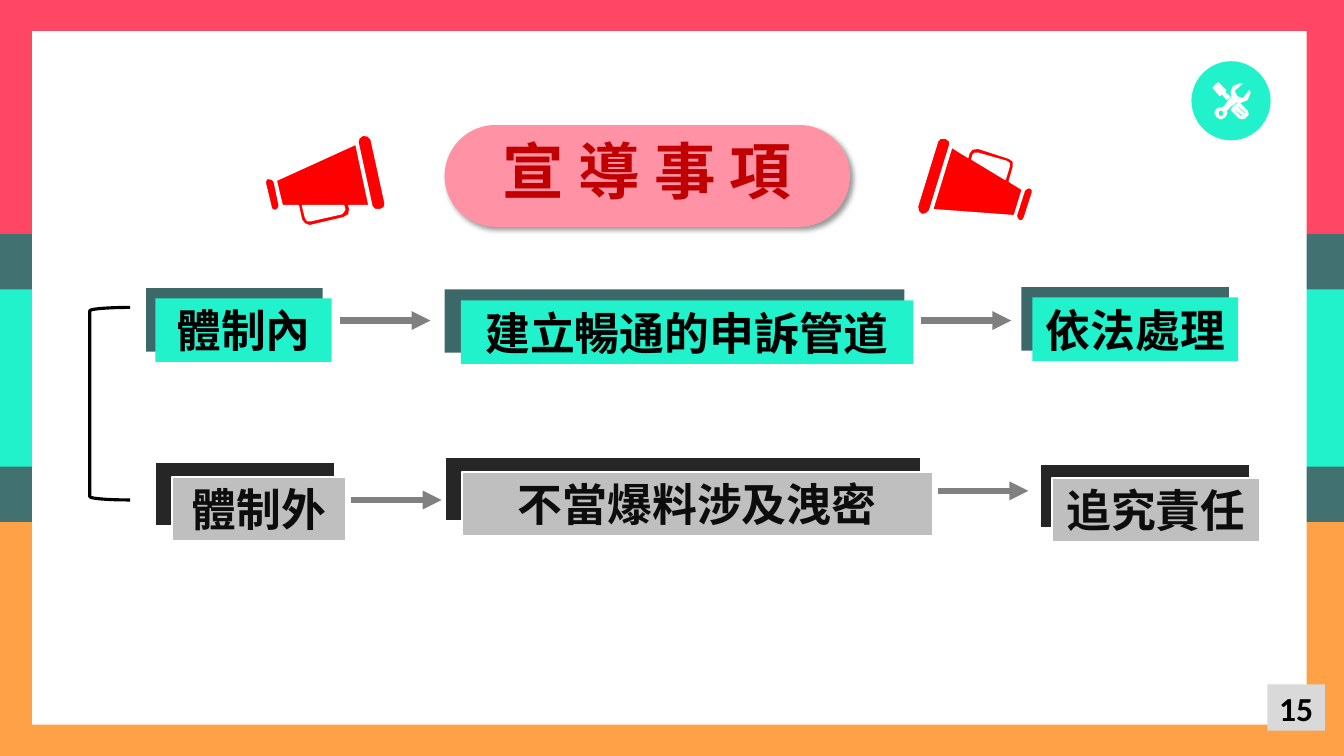
"""Builds the slide 宣導事項: two reporting routes with their outcomes."""
from lxml import etree
from pptx import Presentation
from pptx.dml.color import RGBColor
from pptx.enum.shapes import MSO_CONNECTOR, MSO_SHAPE
from pptx.enum.text import MSO_ANCHOR, MSO_AUTO_SIZE, PP_ALIGN
from pptx.oxml.ns import qn
from pptx.util import Inches, Pt

RECT, OVAL = MSO_SHAPE.RECTANGLE, MSO_SHAPE.OVAL
PILL, BRACKET = MSO_SHAPE.ROUNDED_RECTANGLE, MSO_SHAPE.LEFT_BRACKET
STRAIGHT = MSO_CONNECTOR.STRAIGHT
CENTER, TOP, MIDDLE = PP_ALIGN.CENTER, MSO_ANCHOR.TOP, MSO_ANCHOR.MIDDLE
GROW, FIXED = MSO_AUTO_SIZE.SHAPE_TO_FIT_TEXT, MSO_AUTO_SIZE.NONE
CJK = "Noto Sans CJK SC"
COLORS = {
    "slate": "427172", "mint": "22F2CC", "coral": "FF4664", "orange": "FFA146",
    "white": "FFFFFF", "pink": "FF93A5", "crimson": "C00000", "red": "FF0000",
    "black": "000000", "ink": "0D0D0D", "pale": "D9D9D9", "teal": "3D6869",
    "charcoal": "262626", "silver": "BFBFBF", "gray": "808080",
}
COLORS = {name: RGBColor.from_string(value) for name, value in COLORS.items()}


def paint(sp, fill=None, line=None, width=1):
    """Set fill and line, with no shadow."""
    sp.shadow.inherit = False
    for part, color in ((sp.fill, fill), (sp.line.fill, line)):
        if color:
            part.solid()
            part.fore_color.rgb = COLORS[color]
        else:
            part.background()
    if line:
        sp.line.width = Pt(width)
    return sp


def write(sp, text, color, size=32, font=CJK, anchor=MIDDLE, fit=FIXED):
    """Put one centred bold line into a shape."""
    tf = sp.text_frame
    for name, value in {"word_wrap": True, "auto_size": fit, "vertical_anchor": anchor}.items():
        setattr(tf, name, value)
    p = tf.paragraphs[0]
    p.alignment = CENTER
    r = p.add_run()
    r.text = text
    for name, value in {"size": Pt(size), "bold": True, "name": font}.items():
        setattr(r.font, name, value)
    r.font.color.rgb = COLORS[color]
    etree.SubElement(r.font._element, qn("a:ea"), typeface=font)
    return p


prs = Presentation()
prs.slide_width, prs.slide_height = Inches(13.33), Inches(7.5)
s = prs.slides.add_slide(prs.slide_layouts[6])

for x, y, w, h, color in [
    (0, 0, 13.33, 7.5, "slate"), (0, 2.87, 13.33, 1.76, "mint"),
    (0, 0, 13.33, 2.32, "coral"), (0, 5.18, 13.33, 2.32, "orange"),
    (0.32, 0.31, 12.64, 6.88, "white"),
]:
    paint(s.shapes.add_shape(RECT, Inches(x), Inches(y), Inches(w), Inches(h)), color)

badge = s.shapes.add_group_shape().shapes
paint(badge.add_shape(OVAL, Inches(11.81), Inches(0.6), Inches(0.8), Inches(0.8)), "mint", "white")

TOOLS = [
    [(12.27, 1.01), (12.3, 1.02), (12.37, 0.99), (12.4, 0.92), (12.39, 0.9), (12.33, 0.98),
     (12.27, 0.96), (12.24, 0.9), (12.32, 0.83), (12.3, 0.83), (12.23, 0.86), (12.21, 0.92),
     (12.22, 0.96), (12.13, 1.07), (12.11, 1.07), (12.07, 1.08), (12.05, 1.12), (12.07, 1.16),
     (12.11, 1.18), (12.15, 1.16), (12.17, 1.12), (12.16, 1.1), (12.21, 1.05)],
    [(12.11, 1.16), (12.09, 1.15), (12.08, 1.12), (12.09, 1.1), (12.11, 1.09), (12.13, 1.1),
     (12.14, 1.12), (12.13, 1.15)],
    [(12.12, 0.93), (12.17, 0.99), (12.2, 0.96), (12.14, 0.91), (12.16, 0.9), (12.08, 0.82),
     (12.03, 0.87), (12.1, 0.95)],
    [(12.29, 1.02), (12.24, 1.05), (12.21, 1.09), (12.29, 1.17), (12.32, 1.18), (12.35, 1.17),
     (12.37, 1.15), (12.38, 1.13), (12.37, 1.1)],
    [(12.32, 1.16), (12.31, 1.16), (12.24, 1.09), (12.24, 1.08), (12.25, 1.08), (12.32, 1.14)],
    [(12.35, 1.13), (12.34, 1.13), (12.27, 1.06), (12.27, 1.05), (12.28, 1.05), (12.35, 1.11)],
]
LEFT_HORN = [
    [(3.77, 2.08), (3.72, 2.08), (3.69, 2.05), (3.55, 1.41), (3.56, 1.37), (3.6, 1.34),
     (3.65, 1.35), (3.68, 1.38), (3.82, 2.02), (3.81, 2.06)],
    [(3.47, 2.07), (3.46, 2.13), (3.41, 2.16), (3.07, 2.24), (3.02, 2.22), (2.99, 2.18),
     (2.96, 2.04), (2.8, 2.04), (2.74, 1.79), (3.53, 1.43), (3.66, 2.04), (3.46, 2.04)],
    [(3.41, 2.04), (3, 2.04), (3.03, 2.16), (3.05, 2.19), (3.08, 2.19), (3.39, 2.12),
     (3.42, 2.08)],
    [(2.73, 2.09), (2.7, 2.08), (2.69, 2.06), (2.63, 1.81), (2.64, 1.78), (2.66, 1.77),
     (2.7, 1.78), (2.72, 1.8), (2.77, 2.04), (2.76, 2.07)],
]
RIGHT_HORN = [
    [(9.38, 1.37), (9.42, 1.4), (9.42, 1.44), (9.22, 2.09), (9.19, 2.12), (9.14, 2.13),
     (9.11, 2.1), (9.1, 2.05), (9.3, 1.4), (9.33, 1.37)],
    [(9.61, 1.52), (9.64, 1.48), (9.7, 1.47), (10.01, 1.57), (10.05, 1.6), (10.05, 1.66),
     (10.01, 1.8), (10.14, 1.88), (10.06, 2.14), (9.25, 2.08), (9.44, 1.46), (9.6, 1.56)],
    [(9.64, 1.58), (9.97, 1.78), (10.01, 1.65), (10.01, 1.62), (9.98, 1.6), (9.7, 1.52),
     (9.67, 1.52), (9.65, 1.54)],
    [(10.21, 1.86), (10.24, 1.88), (10.24, 1.91), (10.16, 2.16), (10.14, 2.19), (10.11, 2.19),
     (10.09, 2.17), (10.08, 2.14), (10.16, 1.89), (10.18, 1.87)],
]
for shapes, contours, color, width in [
    (badge, TOOLS, "white", 0.75), (s.shapes, LEFT_HORN, "red", 1), (s.shapes, RIGHT_HORN, "red", 1),
]:
    outlines = [[(Inches(x), Inches(y)) for x, y in contour] for contour in contours]
    builder = shapes.build_freeform(*outlines[0][0])
    for outline in outlines:
        if outline is not outlines[0]:
            builder.move_to(*outline[0])
        builder.add_line_segments(outline[1:], close=True)
    paint(builder.convert_to_shape(), color, "white", width)

title = paint(s.shapes.add_shape(PILL, Inches(4.41), Inches(1.24), Inches(4.02), Inches(1.01)), "pink")
title.adjustments[0] = 0.5
p = write(title, "宣 導 事 項", "crimson", 44, anchor=TOP, fit=GROW)
p.line_spacing, p.space_before = Pt(44), Pt(12)
effects = title._element.spPr.find(qn("a:effectLst"))
shadow = etree.SubElement(effects, qn("a:outerShdw"), blurRad=str(Pt(4)), dist=str(Pt(3)),
                          dir="2700000", algn="tl", rotWithShape="0")
shade = etree.SubElement(shadow, qn("a:srgbClr"), val=str(COLORS["black"]))
etree.SubElement(shade, qn("a:alpha"), val="40000")

page = paint(s.shapes.add_shape(RECT, Inches(12.57), Inches(6.79), Inches(0.57), Inches(0.46)), "pale")
write(page, "15", "black", 24, "Calibri")

paint(s.shapes.add_shape(BRACKET, Inches(0.89), Inches(3.05), Inches(0.4), Inches(1.91)),
      line="black", width=2.25)

INSIDE = {"back": "teal", "front": "mint", "ink": "black", "line": None, "h": 0.63,
          "anchor": MIDDLE, "fit": FIXED}
OUTSIDE = {"back": "charcoal", "front": "silver", "ink": "ink", "line": "white", "h": 0.64,
           "anchor": TOP, "fit": GROW}
for style, text, back, front in [
    (INSIDE, "體制內", (1.45, 2.86, 1.75), (1.54, 2.96, 1.75)),
    (INSIDE, "建立暢通的申訴管道", (4.41, 2.87, 4.56), (4.57, 2.98, 4.49)),
    (INSIDE, "依法處理", (10.13, 2.85, 2.06), (10.24, 2.95, 2.04)),
    (OUTSIDE, "體制外", (1.54, 4.58, 1.78), (1.71, 4.73, 1.72)),
    (OUTSIDE, "不當爆料涉及洩密", (4.41, 4.53, 4.73), (4.58, 4.68, 4.67)),
    (OUTSIDE, "追究責任", (10.31, 4.6, 2.09), (10.43, 4.74, 2.07)),
]:
    for layer, (x, y, w) in (("back", back), ("front", front)):
        sp = s.shapes.add_shape(RECT, Inches(x), Inches(y), Inches(w), Inches(style["h"]))
        paint(sp, style[layer], style["line"], 1.5)
    write(sp, text, style["ink"], anchor=style["anchor"], fit=style["fit"])

for x, y in [(3.37, 3.18), (9.13, 3.18), (3.48, 4.96), (9.3, 4.87)]:
    arrow = s.shapes.add_connector(STRAIGHT, Inches(x), Inches(y), Inches(x + 0.9), Inches(y))
    arrow.line.color.rgb = COLORS["gray"]
    arrow.line.width = Pt(4.5)
    etree.SubElement(arrow.line._get_or_add_ln(), qn("a:tailEnd"), type="triangle")
    etree.SubElement(arrow._element.spPr, qn("a:effectLst"))

prs.save("out.pptx")
